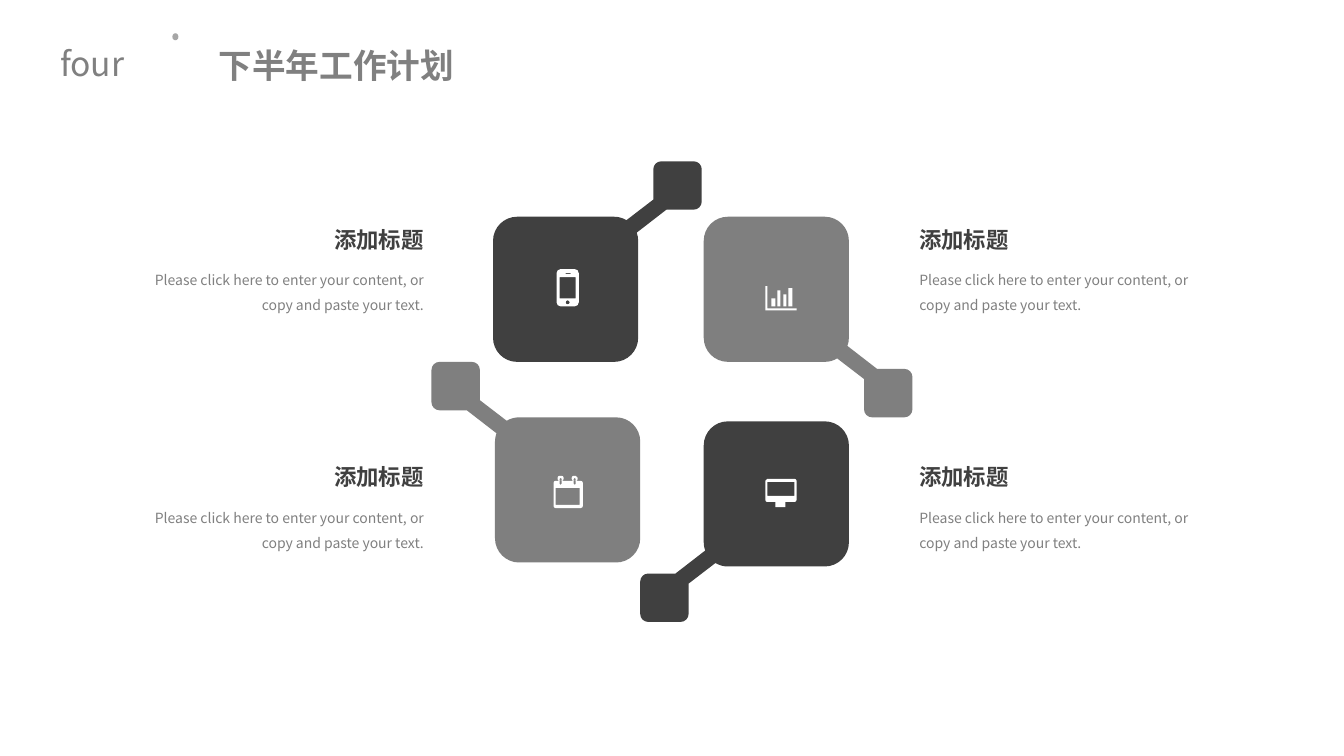
from math import cos, radians, sin, tan

from lxml import etree
from pptx import Presentation
from pptx.dml.color import RGBColor
from pptx.enum.shapes import MSO_SHAPE as Preset
from pptx.enum.text import MSO_ANCHOR as Anchor, PP_ALIGN as Align
from pptx.oxml.ns import qn
from pptx.util import Inches, Pt

FONT = "Noto Sans CJK SC"
COLORS = {
    "dark": "404040",
    "gray": "7F7F7F",
    "text": "808080",
    "dot": "A6A6A6",
    "white": "FFFFFF",
}
BODY = "Please click here to enter your content, or copy and paste your text."
PANEL_WIDTH, PANEL_HEIGHT = 2.07, 1.99

# Rounded corners of a panel: centre x, centre y, radius, first and last angle
PANEL_CORNERS = [
    (1.67, 0.08, 0.08, 180, 270),
    (1.99, 0.08, 0.08, 270, 360),
    (1.99, 0.40, 0.08, 0, 90),
    (1.72, 0.48, 0, 0, 0),
    (1.20, 0.79, 0.24, -20, 0),
    (1.20, 1.75, 0.24, 0, 90),
    (0.24, 1.75, 0.24, 90, 180),
    (0.24, 0.79, 0.24, 180, 270),
    (1.20, 0.79, 0.24, 270, 301),
    (1.59, 0.38, 0, 0, 0),
]

# Left, top, colour, mirrored across, mirrored down
PANELS = [
    (4.89, 1.60, "dark", False, False),
    (6.98, 2.15, "gray", False, True),
    (6.35, 4.18, "dark", True, True),
    (4.28, 3.59, "gray", True, False),
]

# Boxes of each icon: left, top, width, height, corner radius.
# A box inside another one is cut out of it.
ICONS = {
    "calendar": [
        (5.49, 4.77, 0.29, 0.27, 0.02),
        (5.51, 4.84, 0.24, 0.17, 0),
        (5.53, 4.72, 0.06, 0.05, 0.02),
        (5.67, 4.72, 0.06, 0.05, 0.02),
        (5.55, 4.74, 0.02, 0.07, 0.01),
        (5.69, 4.74, 0.02, 0.07, 0.01),
    ],
    "monitor": [
        (7.59, 4.75, 0.31, 0.23, 0.02),
        (7.61, 4.78, 0.27, 0.14, 0),
        (7.69, 4.98, 0.10, 0.05, 0),
    ],
    "bar chart": [
        (7.59, 2.84, 0.02, 0.24, 0),
        (7.61, 3.06, 0.29, 0.02, 0),
        (7.65, 2.96, 0.04, 0.08, 0),
        (7.71, 2.88, 0.03, 0.16, 0),
        (7.77, 2.92, 0.03, 0.12, 0),
        (7.82, 2.86, 0.04, 0.18, 0),
    ],
    "phone": [
        (5.52, 2.67, 0.22, 0.37, 0.04),
        (5.55, 2.75, 0.16, 0.21, 0),
        (5.61, 2.71, 0.05, 0.01, 0),
        (5.61, 2.98, 0.04, 0.04, 0.02),
    ],
}


def rgb(name):
    return RGBColor.from_string(COLORS[name])


def corner_segments(x, y, radius, first, last):
    """Return a line to the corner and, if it is round, a Bézier curve of three points."""
    if not radius:
        return [[(x, y)]]
    a, b = radians(first), radians(last)
    reach = 4 / 3 * tan((b - a) / 4)
    unit = [
        (cos(a), sin(a)),
        (cos(a) - reach * sin(a), sin(a) + reach * cos(a)),
        (cos(b) + reach * sin(b), sin(b) - reach * cos(b)),
        (cos(b), sin(b)),
    ]
    points = [(x + radius * dx, y + radius * dy) for dx, dy in unit]
    return [points[:1], points[1:]]


def box_segments(left, top, width, height, radius):
    right, bottom = left + width - radius, top + height - radius
    left, top = left + radius, top + radius
    centres = [(left, top), (right, top), (right, bottom), (left, bottom)]
    return [
        segment
        for i, (x, y) in enumerate(centres)
        for segment in corner_segments(x, y, radius, 180 + 90 * i, 270 + 90 * i)
    ]


def join_curves(shape, contours):
    """Turn each run of three lines that stands for a curve into that curve."""
    lines = shape._element.iter(qn("a:lnTo"))
    lines = iter(list(lines))
    for contour in contours:
        for segment in contour[1:]:
            steps = [next(lines) for _ in segment]
            if len(steps) == 3:
                curve = etree.Element(qn("a:cubicBezTo"))
                steps[0].addprevious(curve)
                for step in steps:
                    curve.append(step[0])
                    step.getparent().remove(step)


def add_outline(slide, contours):
    """Build one shape from closed contours, each a list of segments in inches."""
    builder = None
    for contour in contours:
        start, *points = [
            (Inches(x), Inches(y)) for segment in contour for x, y in segment
        ]
        if builder is None:
            builder = slide.shapes.build_freeform(*start)
        else:
            builder.move_to(*start)
        builder.add_line_segments(points, close=True)
    shape = builder.convert_to_shape()
    join_curves(shape, contours)
    return shape


def paint(shape, color=None):
    shape.shadow.inherit = False
    shape.line.fill.background()
    if color:
        shape.fill.solid()
        shape.fill.fore_color.rgb = rgb(color)
    else:
        shape.fill.background()


def add_panel(slide, left, top, color, mirror_x, mirror_y):
    def place(x, y):
        return (
            left + (PANEL_WIDTH - x if mirror_x else x),
            top + (PANEL_HEIGHT - y if mirror_y else y),
        )

    contour = [
        [place(*point) for point in segment]
        for corner in PANEL_CORNERS
        for segment in corner_segments(*corner)
    ]
    paint(add_outline(slide, [contour]), color)


def write(shape, text, size, color, paragraph_format, frame_format, bold=False):
    frame = shape.text_frame
    paragraph = frame.paragraphs[0]
    run = paragraph.add_run()
    run.text = text
    font_format = {"name": FONT, "size": Pt(size), "bold": bold}
    formats = [(frame, frame_format), (paragraph, paragraph_format), (run.font, font_format)]
    for target, values in formats:
        for name, value in values.items():
            setattr(target, name, value)
    run.font.color.rgb = rgb(color)


def add_text(slide, box, *content, **options):
    write(slide.shapes.add_textbox(*map(Inches, box)), *content, **options)


def add_caption(slide, title_left, body_left, top, align):
    add_text(slide, (title_left, top, 1.1, 0.34), "添加标题", 16, "dark",
             {"alignment": align, "line_spacing": 0.9}, {"word_wrap": False}, bold=True)
    add_text(slide, (body_left, top + 0.34, 2.91, 0.58), BODY, 10, "text",
             {"alignment": align, "line_spacing": Pt(18)}, {"word_wrap": True})


def add_header(slide):
    dot = slide.shapes.add_shape(
        Preset.OVAL, Inches(1.71), Inches(0.33), Inches(0.06), Inches(0.07))
    paint(dot, "dot")
    add_text(slide, (0.48, 0.38, 0.87, 0.5), "four", 24, "text",
             {"alignment": Align.CENTER}, {"word_wrap": False})
    heading = add_outline(slide, [box_segments(1.9, 0.33, 4.83, 0.68, 0)])
    paint(heading)
    margins = {"left": 0.27, "right": 0.3, "top": 0.17, "bottom": 0.17}
    frame_format = {f"margin_{side}": Inches(gap) for side, gap in margins.items()}
    frame_format |= {"word_wrap": True, "vertical_anchor": Anchor.MIDDLE}
    write(heading, "下半年工作计划", 24, "text",
          {"alignment": Align.JUSTIFY, "line_spacing": 0.9}, frame_format, bold=True)


def main():
    presentation = Presentation()
    presentation.slide_width, presentation.slide_height = Inches(13.33), Inches(7.5)
    slide = presentation.slides.add_slide(presentation.slide_layouts[6])
    add_header(slide)
    for panel in PANELS:
        add_panel(slide, *panel)
    for boxes in ICONS.values():
        paint(add_outline(slide, [box_segments(*box) for box in boxes]), "white")
    for top in (2.22, 4.58):
        add_caption(slide, 9.02, 9.02, top, Align.LEFT)
        add_caption(slide, 3.2, 1.39, top, Align.RIGHT)
    presentation.save("out.pptx")


if __name__ == "__main__":
    main()
